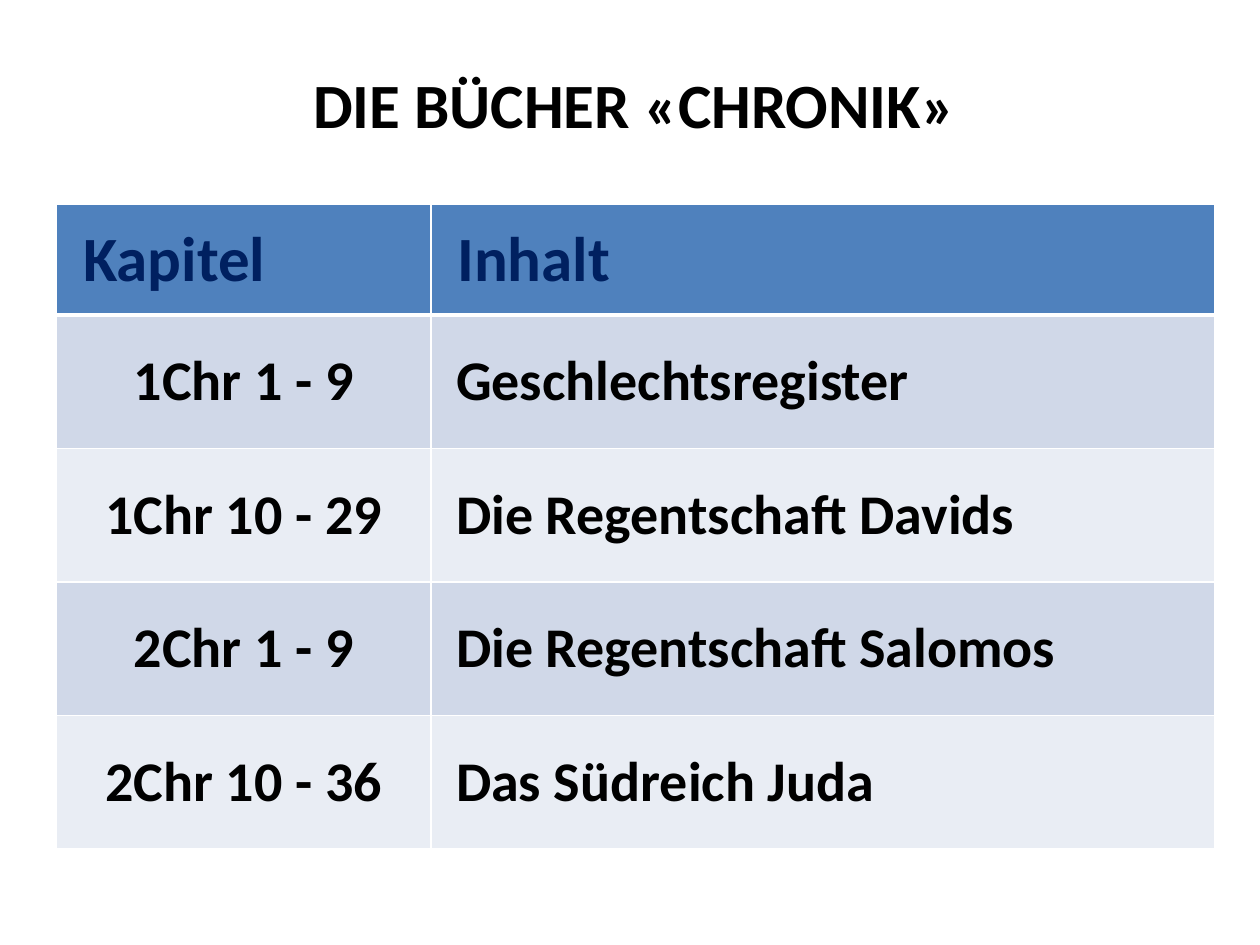
from lxml import etree
from pptx import Presentation
from pptx import util as u
from pptx.dml.color import RGBColor
from pptx.enum import text
from pptx.oxml.ns import qn


def paint(target, value):
    if hasattr(target, "solid"):
        target.solid()
        target = target.fore_color
    else:
        target = target.color
    target.rgb = RGBColor.from_string(value)


def add_border(cell, side, position, width):
    line = etree.Element(qn("a:" + side), w=str(u.Pt(width)))
    fill = etree.SubElement(line, qn("a:solidFill"))
    etree.SubElement(fill, qn("a:srgbClr"), val="FFFFFF")
    cell._tc.get_or_add_tcPr().insert(position, line)


deck = Presentation()
deck.slide_width, deck.slide_height = u.Inches(10), u.Inches(7.5)
page = deck.slides.add_slide(deck.slide_layouts[5])

title = page.shapes.title
title.left, title.top = u.Inches(0.43), u.Inches(0.44)
title.width, title.height = u.Inches(9.21), u.Inches(0.63)
paint(title.fill, "FFFFFF")
color = title.fill._xPr.find(".//" + qn("a:srgbClr"))
etree.SubElement(color, qn("a:alpha"), val="60000")
frame = title.text_frame
frame.text = "DIE BÜCHER «CHRONIK»"
frame.auto_size = text.MSO_AUTO_SIZE.NONE
frame.vertical_anchor = text.MSO_ANCHOR.TOP
frame.margin_top = u.Inches(0.08)
frame.paragraphs[0].alignment = text.PP_ALIGN.CENTER
font = frame.paragraphs[0].runs[0].font
font.name, font.size, font.bold = "Calibri", u.Pt(36), True
paint(font, "000000")

entries = [
    ("Kapitel", "Inhalt"),
    ("1Chr 1 - 9", "Geschlechtsregister"),
    ("1Chr 10 - 29", "Die Regentschaft Davids"),
    ("2Chr 1 - 9", "Die Regentschaft Salomos"),
    ("2Chr 10 - 36", "Das Südreich Juda"),
]
column_widths = [2.97, 6.22]
row_heights = [0.88] + [1.06] * 4

table = page.shapes.add_table(
    len(entries), 2, u.Inches(0.45), u.Inches(1.62),
    u.Inches(sum(column_widths)), u.Inches(sum(row_heights))).table
for column, width in zip(table.columns, column_widths):
    column.width = u.Inches(width)

for row_number, entry in enumerate(entries):
    table.rows[row_number].height = u.Inches(row_heights[row_number])
    header = row_number == 0
    band = "4F81BD" if header else ("E9EDF4", "D0D8E8")[row_number % 2]
    for column_number, label in enumerate(entry):
        cell = table.cell(row_number, column_number)
        cell.text = label
        cell.vertical_anchor = text.MSO_ANCHOR.MIDDLE
        paint(cell.fill, band)
        para = cell.text_frame.paragraphs[0]
        if header or column_number == 1:
            para.alignment = text.PP_ALIGN.LEFT
            cell.margin_left = u.Inches(0.21 if header else 0.2)
        else:
            para.alignment = text.PP_ALIGN.CENTER
        font = para.runs[0].font
        font.name, font.bold = "Calibri", True
        font.size = u.Pt(36 if header else 32)
        paint(font, "002060" if header else "000000")
        widths = (1, 1, 3 if row_number == 1 else 1, 3 if header else 1)
        for position, side in enumerate(("lnL", "lnR", "lnT", "lnB")):
            add_border(cell, side, position, widths[position])

deck.save("out.pptx")
